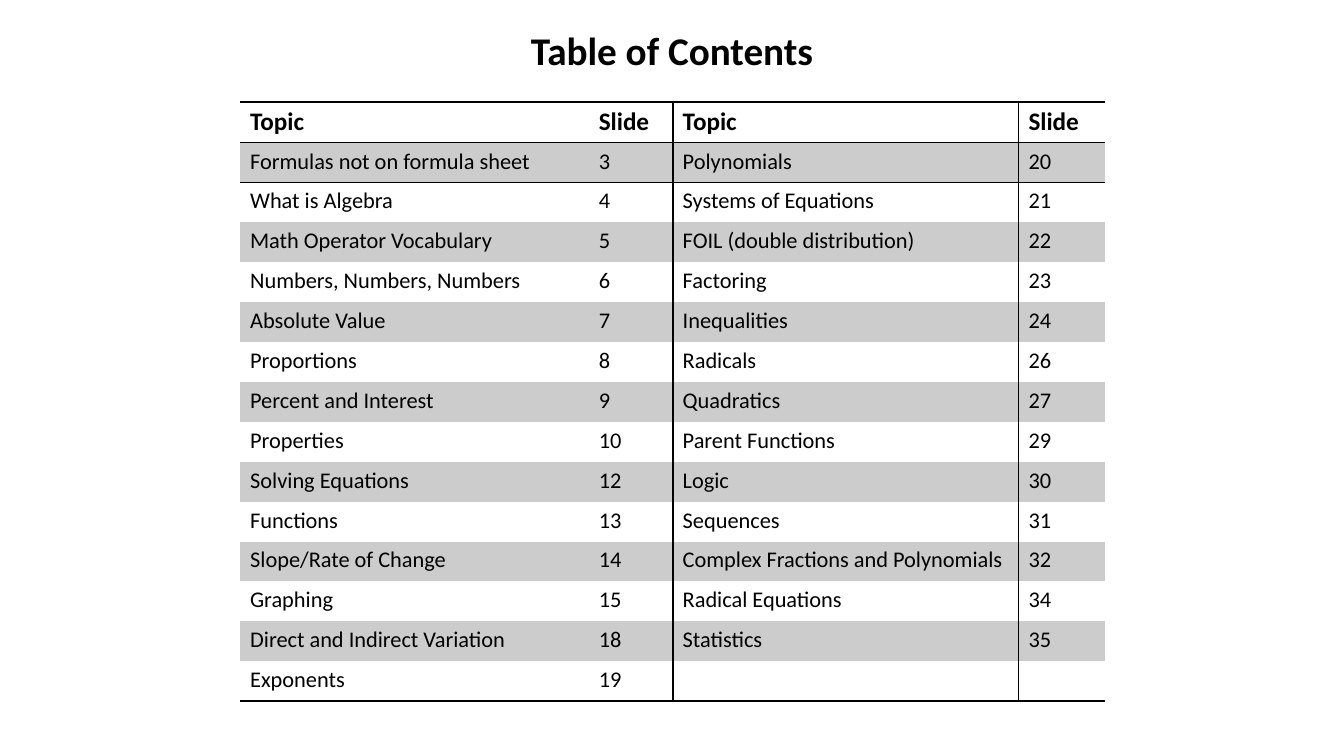
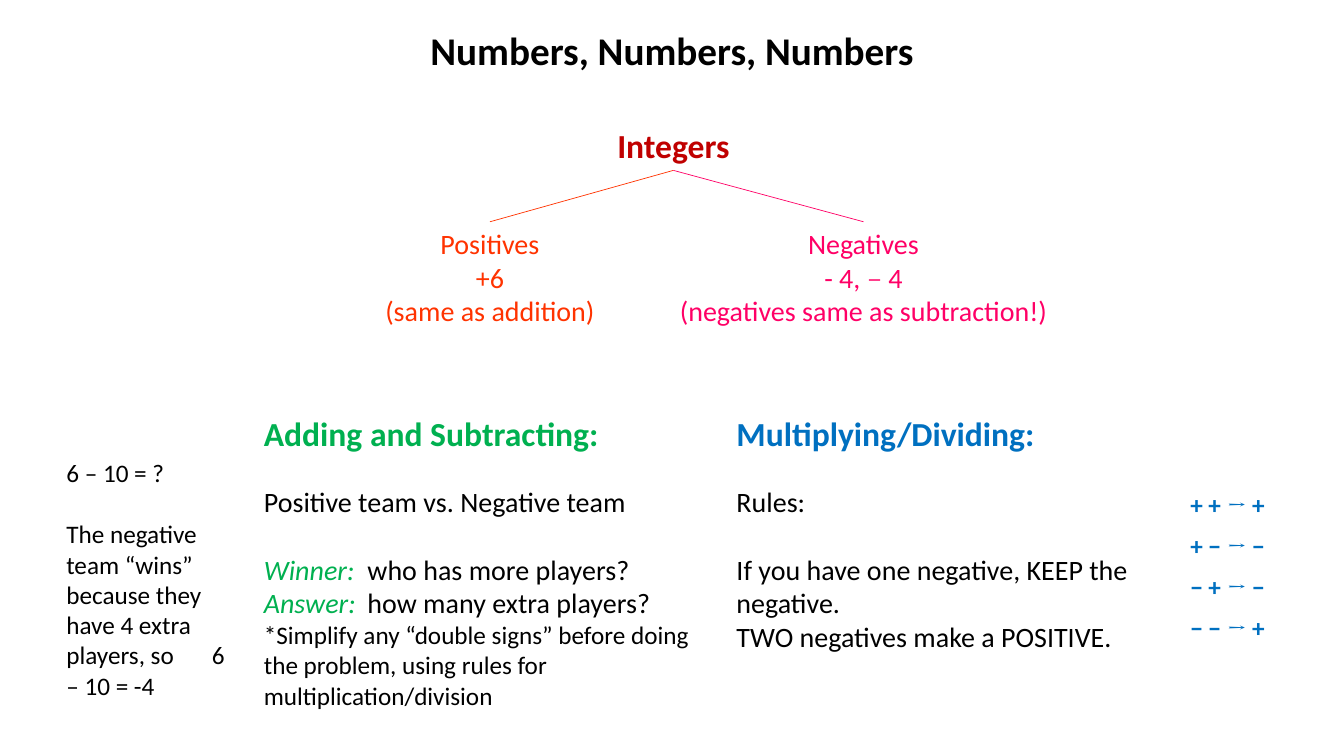
"""Build two algebra review slides: a table of contents and an integer summary."""
from dataclasses import dataclass, field
from itertools import zip_longest

from lxml.etree import SubElement
from pptx import Presentation
from pptx.dml.color import RGBColor as RGB
from pptx.enum.shapes import MSO_CONNECTOR as CONN
from pptx.enum.text import MSO_ANCHOR as ANCHOR, MSO_AUTO_SIZE as FIT, PP_ALIGN as ALIGN
from pptx.oxml import parse_xml
from pptx.oxml.ns import nsdecls, qn
from pptx.util import Pt

NO_STYLE = "{2D5ABB26-0587-4C30-8999-92F81FD0307C}"


@dataclass(frozen=True)
class Theme:
    """Colours, fonts and type sizes."""
    font: str = "Calibri"
    math: str = "Cambria"
    black: str = "000000"
    band: str = "CCCCCC"
    root: str = "C00000"
    positive: str = "FF3300"
    negative: str = "FF0066"
    add: str = "00B050"
    multiply: str = "0070C0"
    title: int = 28
    heading: int = 24
    body: int = 20
    note: int = 18
    cell: int = 16


T = Theme()


@dataclass
class Para:
    """A paragraph: (text, format) runs, a shared format, a gap above and a tab stop."""
    runs: list
    fmt: dict = field(default_factory=dict)
    before: float = 0
    tab: float = 0


def add_run(p, text, font=T.font, size=T.body, color=T.black, bold=False, italic=False):
    """Append formatted text to a paragraph."""
    r = p.add_run()
    r.text = text
    f = r.font
    f.name, f.size, f.bold, f.italic = font, Pt(size), bold, italic
    f.color.rgb = RGB.from_string(color)


def line(text, before=0, tab=0, **fmt):
    """Return a paragraph with a single run."""
    return Para([(text, {})], fmt, before, tab)


def fill_text(tf, paras, align=ALIGN.LEFT, **base):
    """Write paragraphs into a text frame."""
    for i, para in enumerate(paras):
        p = tf.add_paragraph() if i else tf.paragraphs[0]
        p.alignment, p.space_before = align, Pt(para.before)
        if para.tab:
            tabs = SubElement(p._p.get_or_add_pPr(), qn("a:tabLst"))
            SubElement(tabs, qn("a:tab"), pos=str(Pt(para.tab)), algn="l")
        for text, fmt in para.runs:
            add_run(p, text, **{**base, **para.fmt, **fmt})


def set_borders(cell, **widths):
    """Draw black borders on the named sides (L, R, T, B), in points."""
    tc_pr = cell._tc.get_or_add_tcPr()
    sides = [s for s in "LRTB" if widths.get(s)]
    for i, s in enumerate(sides):
        tc_pr.insert(i, parse_xml(
            f'<a:ln{s} {nsdecls("a")} w="{Pt(widths[s])}"><a:solidFill>'
            f'<a:srgbClr val="{T.black}"/></a:solidFill></a:ln{s}>'))


class Deck:
    """Hold the presentation and the current slide."""

    def __init__(self):
        self.prs = Presentation()
        self.prs.slide_width, self.prs.slide_height = Pt(960), Pt(540)
        self.s = None

    def slide(self, title):
        self.s = self.prs.slides.add_slide(self.prs.slide_layouts[5])
        sp = self.s.shapes.title
        sp.left, sp.top, sp.width, sp.height = Pt(66), Pt(17.3), Pt(828), Pt(40.3)
        tf = sp.text_frame
        tf.vertical_anchor, tf.auto_size = ANCHOR.MIDDLE, FIT.NONE
        fill_text(tf, [line(title)], ALIGN.CENTER, size=T.title, bold=True)
        tf.paragraphs[0].line_spacing = 0.9

    def text(self, x, y, w, h, paras, align=ALIGN.LEFT, wrap=True, **base):
        tf = self.s.shapes.add_textbox(Pt(x), Pt(y), Pt(w), Pt(h)).text_frame
        tf.word_wrap, tf.auto_size = wrap, FIT.SHAPE_TO_FIT_TEXT
        fill_text(tf, paras, align, **base)

    def label(self, center, y, w, h, paras, **base):
        self.text(center - w / 2, y, w, h, paras, ALIGN.CENTER, False, **base)

    def table(self, x, y, widths, heights, rows):
        frame = self.s.shapes.add_table(len(rows), len(widths), Pt(x), Pt(y),
                                        Pt(sum(widths)), Pt(sum(heights)))
        tbl = frame.table
        tbl.first_row = tbl.horz_banding = False
        tbl._tbl.tblPr.find(qn("a:tableStyleId")).text = NO_STYLE
        for col, w in zip(tbl.columns, widths):
            col.width = Pt(w)
        for row, h, paras in zip(tbl.rows, heights, rows):
            row.height = Pt(h)
            for cell, para in zip(row.cells, paras):
                cell.fill.background()
                fill_text(cell.text_frame, [para])
        return tbl

    def connect(self, start, end, color):
        cx = self.s.shapes.add_connector(CONN.STRAIGHT, *map(Pt, start + end))
        cx.line.color.rgb, cx.line.width = RGB.from_string(color), Pt(0.5)
        SubElement(cx._element.spPr, qn("a:effectLst"))


LEFT_TOPICS = [
    ("Formulas not on formula sheet", 3), ("What is Algebra", 4),
    ("Math Operator Vocabulary", 5), ("Numbers, Numbers, Numbers", 6),
    ("Absolute Value", 7), ("Proportions", 8), ("Percent and Interest", 9),
    ("Properties", 10), ("Solving Equations", 12), ("Functions", 13),
    ("Slope/Rate of Change", 14), ("Graphing", 15),
    ("Direct and Indirect Variation", 18), ("Exponents", 19)]
RIGHT_TOPICS = [
    ("Polynomials", 20), ("Systems of Equations", 21),
    ("FOIL (double distribution)", 22), ("Factoring", 23), ("Inequalities", 24),
    ("Radicals", 26), ("Quadratics", 27), ("Parent Functions", 29), ("Logic", 30),
    ("Sequences", 31), ("Complex Fractions and Polynomials", 32),
    ("Radical Equations", 34), ("Statistics", 35)]


def contents_slide(deck):
    """Build the table of contents."""
    deck.slide("Table of Contents")
    topics = [a + b for a, b in zip_longest(LEFT_TOPICS, RIGHT_TOPICS, fillvalue=("", ""))]
    rows = [[line(t, size=T.note, bold=True) for t in ("Topic", "Slide") * 2]]
    rows += [[line(str(t), size=T.cell) for t in row] for row in topics]
    last = len(rows) - 1
    tbl = deck.table(171.5, 72.7, [249, 60, 247, 62], [29.2] + [28.5] * last, rows)
    dividers = {2: 1.5, 3: 1}
    for i, row in enumerate(tbl.rows):
        for j, cell in enumerate(row.cells):
            if i % 2:
                cell.fill.solid()
                cell.fill.fore_color.rgb = RGB.from_string(T.band)
            set_borders(cell, L=dividers.get(j), R=dividers.get(j + 1),
                        T={0: 1.5, 1: 1}.get(i), B=1 if i in (0, last) else 0)


def integers_slide(deck):
    """Build the integer rules."""
    deck.slide("Numbers, Numbers, Numbers")
    root = (481, 121.7)
    deck.label(root[0], 85.7, 95.8, 36, [line("Integers")],
               size=T.heading, color=T.root, bold=True)
    minus = Para([("- 4, ", {}), ("− ", {"font": T.math}), ("4", {})])
    branches = [
        (350, 165.6, T.positive,
         [line("Positives"), line("+6"), line("(same as addition)")]),
        (616.8, 280, T.negative,
         [line("Negatives"), minus, line("(negatives same as subtraction!)")])]
    for center, w, color, paras in branches:
        deck.label(center, 158.4, w, 80, paras, color=color)
        deck.connect(root, (center, 158.4), color)

    def heading(text, color):
        return line(text, size=T.heading, color=color, bold=True)

    def question(term, text, before=0):
        return Para([(term, {"color": T.add, "italic": True}), ("\t" + text, {})],
                    before=before, tab=74)

    deck.text(181.4, 291.6, 337, 220, [
        heading("Adding and Subtracting:", T.add),
        line("Positive team vs. Negative team", before=22),
        question("Winner:", "who has more players?", before=24.4),
        question("Answer:", "how many extra players?"),
        line("*Simplify any “double signs” before doing", size=T.note),
        line("the problem, using rules for multiplication/division", size=T.note)])
    deck.text(519, 291.6, 299.5, 179, [
        heading("Multiplying/Dividing:", T.multiply),
        line("Rules:", before=22),
        line("If you have one negative, KEEP the negative.", before=24.4),
        line("TWO negatives make a POSITIVE.")])
    signs = {"size": T.note, "color": T.multiply, "bold": True}
    rules = [("+ +", "+"), ("+ −", "−"), ("− +", "−"), ("− −", "+")]
    deck.table(843, 347, [102], [29.2] * len(rules), [
        [Para([(pair + " ", {}), ("→", {"font": T.math}), (" " + result, {})], signs)]
        for pair, result in rules])
    deck.text(40.3, 323.3, 129, 181, [
        line("6 – 10 = ?"),
        line("The negative team “wins” because they have 4 extra players, so\t6 – 10 = -4",
             before=22, tab=104)], size=T.note)


def main():
    """Build and save the deck."""
    deck = Deck()
    contents_slide(deck)
    integers_slide(deck)
    deck.prs.save("out.pptx")


if __name__ == "__main__":
    main()
